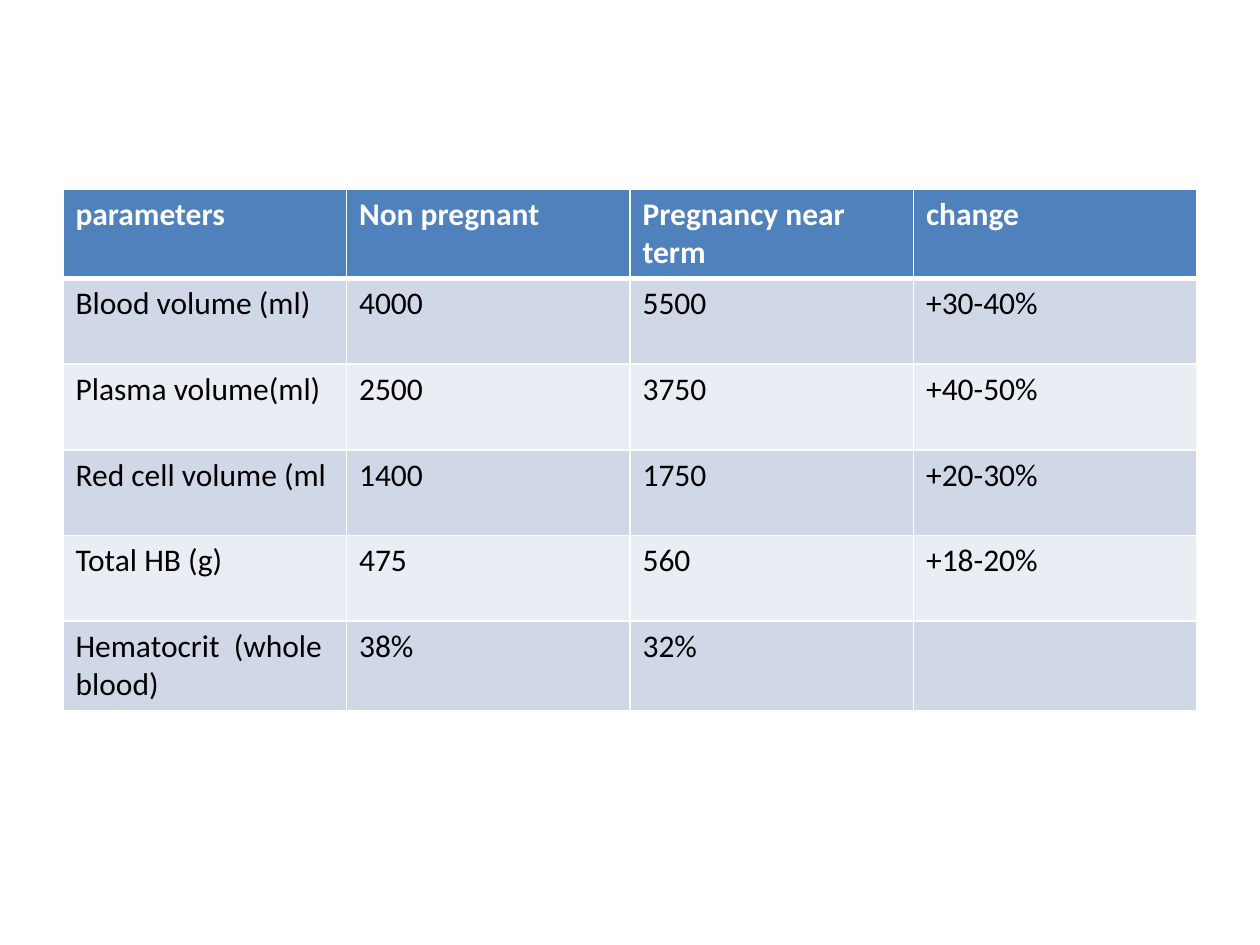
import pptx
import pptx.dml.color
import pptx.oxml.ns
import pptx.util
import lxml.etree
from pptx.dml.color import RGBColor
from pptx.util import Inches

WHITE = RGBColor(0xFF, 0xFF, 0xFF)
BLACK = RGBColor(0x00, 0x00, 0x00)
HEADER_BLUE = RGBColor(0x4F, 0x81, 0xBD)
BAND_DARK = RGBColor(0xD0, 0xD8, 0xE8)
BAND_LIGHT = RGBColor(0xE9, 0xED, 0xF4)

ROWS = [
    ("parameters", "Non pregnant", "Pregnancy near term", "change"),
    ("Blood volume (ml)", "4000", "5500", "+30-40%"),
    ("Plasma volume(ml)", "2500", "3750", "+40-50%"),
    ("Red cell volume (ml", "1400", "1750", "+20-30%"),
    ("Total HB (g)", "475", "560", "+18-20%"),
    ("Hematocrit  (whole blood)", "38%", "32%", ""),
]


def add_border(cell, side, width, color):
    qn = pptx.oxml.ns.qn
    properties = cell._tc.get_or_add_tcPr()
    line = lxml.etree.SubElement(properties, qn(f"a:ln{side}"), w=str(pptx.util.Pt(width)))
    fill = lxml.etree.SubElement(line, qn("a:solidFill"))
    lxml.etree.SubElement(fill, qn("a:srgbClr"), val=str(color))


presentation = pptx.Presentation()
presentation.slide_width = Inches(10)
presentation.slide_height = Inches(7.5)
slide = presentation.slides.add_slide(presentation.slide_layouts[6])

row_height = Inches(0.68)
table = slide.shapes.add_table(
    len(ROWS), len(ROWS[0]), Inches(0.5), Inches(1.5), Inches(9), row_height * len(ROWS)
).table
for column in table.columns:
    column.width = Inches(2.25)
for row in table.rows:
    row.height = row_height

for row_index, texts in enumerate(ROWS):
    is_header = row_index == 0
    if is_header:
        fill_color = HEADER_BLUE
    else:
        fill_color = BAND_DARK if row_index % 2 else BAND_LIGHT
    border_widths = {
        "L": 1,
        "R": 1,
        "T": 3 if row_index == 1 else 1,
        "B": 3 if is_header else 1,
    }
    for column_index, text in enumerate(texts):
        cell = table.cell(row_index, column_index)
        for side, width in border_widths.items():
            add_border(cell, side, width, WHITE)
        cell.fill.solid()
        cell.fill.fore_color.rgb = fill_color
        if text:
            run = cell.text_frame.paragraphs[0].add_run()
            run.text = text
            run.font.name = "Calibri"
            run.font.size = pptx.util.Pt(18)
            run.font.bold = is_header
            run.font.color.rgb = WHITE if is_header else BLACK

presentation.save("out.pptx")
